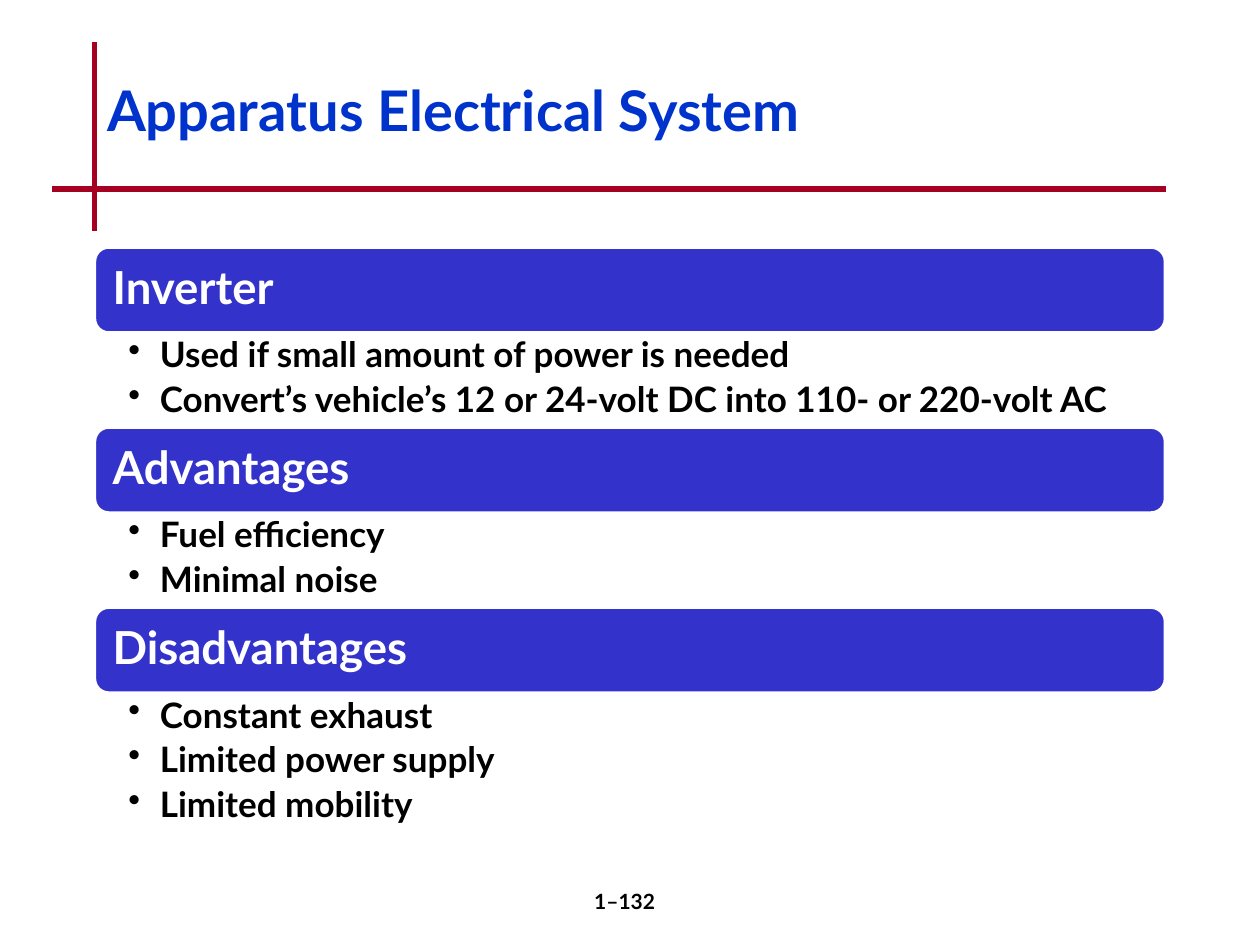
from lxml import etree
from pptx import Presentation
from pptx.dml.color import RGBColor
from pptx.enum.shapes import MSO_CONNECTOR, MSO_SHAPE
from pptx.enum.text import MSO_ANCHOR, MSO_AUTO_SIZE, PP_ALIGN
from pptx.oxml.ns import qn
from pptx.util import Pt

STRAIGHT = MSO_CONNECTOR.STRAIGHT
ROUNDED = MSO_SHAPE.ROUNDED_RECTANGLE
MIDDLE, TOP = MSO_ANCHOR.MIDDLE, MSO_ANCHOR.TOP
LEFT, CENTER = PP_ALIGN.LEFT, PP_ALIGN.CENTER

# Content
TITLE = "Apparatus Electrical System"
PAGE_NUMBER = "1–132"
SECTIONS = [
    ("Inverter", [
        "Used if small amount of power is needed",
        "Convert’s vehicle’s 12 or 24-volt DC into 110- or 220-volt AC",
    ]),
    ("Advantages", ["Fuel efficiency", "Minimal noise"]),
    ("Disadvantages", [
        "Constant exhaust", "Limited power supply", "Limited mobility",
    ]),
]

# Style and layout, in points
FONT = "Lato"
COLORS = {"title": "0033CC", "rule": "A50021", "bar": "3333CC",
          "white": "FFFFFF", "text": "000000"}
MARGIN, CONTENT_WIDTH = 54, 612
RULES = [(54, 24, 54, 132), (30, 108, 666, 108)]
SECTIONS_TOP, BAR_HEIGHT, ITEM_HEIGHT = 141.2, 49.1, 26.9
BULLET_INDENT = 18


def color(name):
    return RGBColor.from_string(COLORS[name])


def style(paragraph, size, color_name, align=LEFT):
    paragraph.alignment = align
    font = paragraph.font
    font.name, font.size, font.bold = FONT, Pt(size), True
    font.color.rgb = color(color_name)


def set_frame(frame, anchor, left, top, right, bottom):
    frame.word_wrap = True
    frame.vertical_anchor = anchor
    frame.margin_left, frame.margin_top = Pt(left), Pt(top)
    frame.margin_right, frame.margin_bottom = Pt(right), Pt(bottom)


def add_bullet(paragraph):
    props = paragraph._p.get_or_add_pPr()
    props.set("marL", str(Pt(BULLET_INDENT)))
    props.set("indent", str(-Pt(BULLET_INDENT)))
    etree.SubElement(props, qn("a:buChar")).set("char", "•")


def add_rule(slide, x1, y1, x2, y2):
    rule = slide.shapes.add_connector(STRAIGHT, Pt(x1), Pt(y1), Pt(x2), Pt(y2))
    rule.line.color.rgb = color("rule")
    rule.line.width = Pt(3)
    etree.SubElement(rule._element.spPr, qn("a:effectLst"))


def add_heading(slide, heading, top):
    bar = slide.shapes.add_shape(ROUNDED, Pt(MARGIN), Pt(top),
                                 Pt(CONTENT_WIDTH), Pt(BAR_HEIGHT))
    bar.shadow.inherit = False
    bar.fill.solid()
    bar.fill.fore_color.rgb = color("bar")
    bar.line.color.rgb = color("white")
    bar.line.width = Pt(2)
    set_frame(bar.text_frame, MIDDLE, 8, 8, 8, 8)
    paragraph = bar.text_frame.paragraphs[0]
    paragraph.text = heading
    paragraph.line_spacing = 0.9
    paragraph.space_after = Pt(9)
    style(paragraph, 26, "white")


def add_items(slide, items, top, height):
    box = slide.shapes.add_textbox(Pt(MARGIN), Pt(top),
                                   Pt(CONTENT_WIDTH), Pt(height))
    frame = box.text_frame
    set_frame(frame, TOP, 19.4, 2.6, 14.4, 2.6)
    frame.text = "\n".join(items)
    for paragraph in frame.paragraphs:
        add_bullet(paragraph)
        paragraph.line_spacing = 0.9
        paragraph.space_after = Pt(4)
        style(paragraph, 20, "text")


def main():
    deck = Presentation()
    deck.slide_width, deck.slide_height = Pt(720), Pt(540)
    slide = deck.slides.add_slide(deck.slide_layouts[5])

    # Crossed rules beside and below the title
    for ends in RULES:
        add_rule(slide, *ends)

    # Title
    title = slide.shapes.title
    title.left, title.top = Pt(MARGIN), Pt(24)
    title.width, title.height = Pt(CONTENT_WIDTH), Pt(84)
    set_frame(title.text_frame, MIDDLE, 7.2, 3.6, 7.2, 3.6)
    title.text_frame.auto_size = MSO_AUTO_SIZE.NONE
    title.text_frame.text = TITLE
    heading = title.text_frame.paragraphs[0]
    heading.line_spacing = 0.8
    style(heading, 32, "title")

    # Heading bars, each followed by its bullets
    top = SECTIONS_TOP
    for section, items in SECTIONS:
        add_heading(slide, section, top)
        top += BAR_HEIGHT
        items_height = ITEM_HEIGHT * len(items)
        add_items(slide, items, top, items_height)
        top += items_height

    # Page number
    footer = slide.shapes.add_textbox(Pt(282), Pt(504), Pt(150), Pt(36))
    set_frame(footer.text_frame, TOP, 7.2, 3.6, 7.2, 3.6)
    footer.text_frame.text = PAGE_NUMBER
    style(footer.text_frame.paragraphs[0], 12, "text", CENTER)

    deck.save("out.pptx")


if __name__ == "__main__":
    main()
